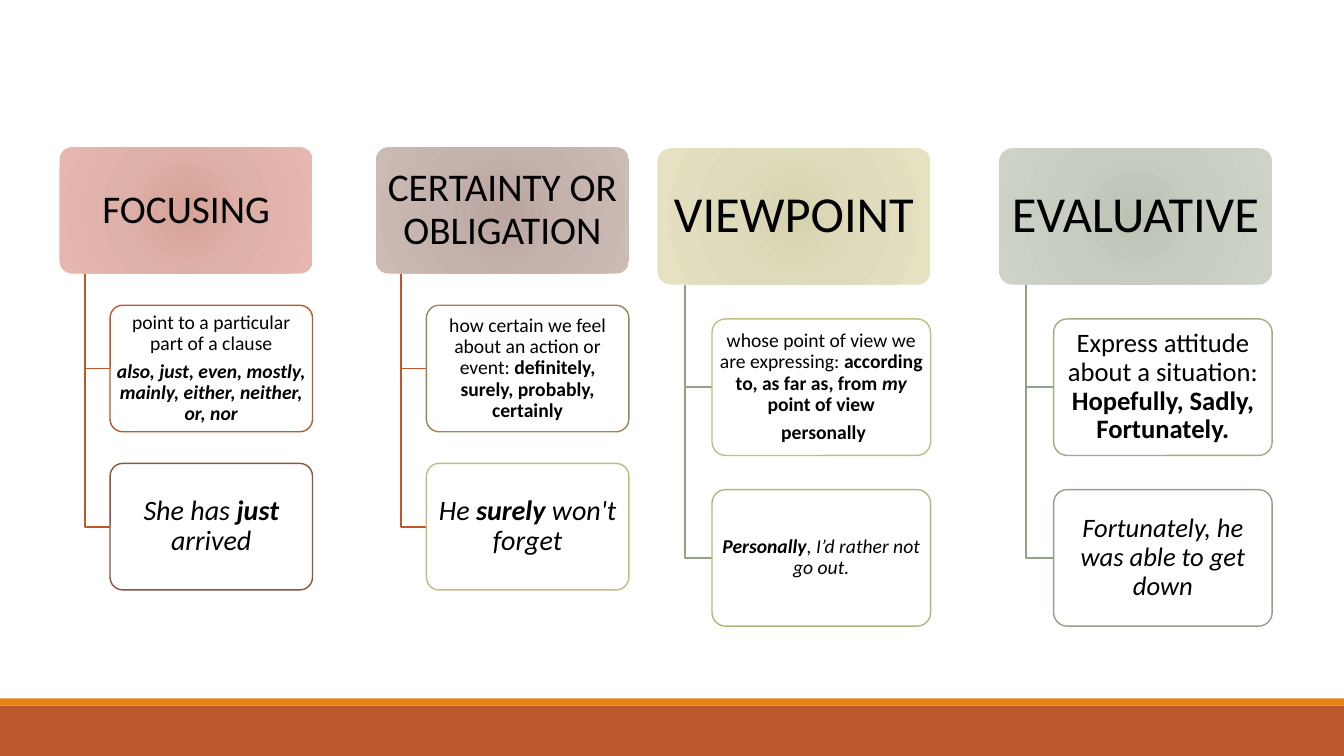
"""Builds a slide that sorts adverbs into four columns of boxes."""
from lxml.etree import SubElement
from pptx import Presentation
from pptx.dml.color import RGBColor
from pptx.enum.shapes import MSO_SHAPE as Preset
from pptx.enum.text import MSO_ANCHOR as Anchor, PP_ALIGN as Align
from pptx.oxml import parse_xml
from pptx.oxml.ns import nsdecls, qn
from pptx.util import Inches, Pt

WIDTH, HEIGHT = 13.33, 7.5
FONT = "Calibri"
COLORS = {
    "text": "000000", "paper": "FFFFFF", "rust": "BD582C", "orange": "E48312",
    "brown": "865640", "tan": "9B8357", "sand": "C2BC80", "olive": "B2B782",
    "moss": "A0AC85", "sage": "94A088",
}
GRADIENTS = {
    "rose": ("D7A197", "DEB1A8", "E6B7AE"),
    "taupe": ("B9A49E", "C4B2AD", "CCBAB5"),
    "straw": ("D7D3AF", "DFDBBD", "E5E1C1"),
    "mist": ("BBC3B5", "C7CDC1", "CDD4C7"),
}
GRADIENT_STOPS = (0, 45, 100)

# Each pair: left, top and header width, stem colour, columns.
# Each column: gradient, header, header size, boxes of (outline, size, paragraphs).
# Each run: text and its style letters, b for bold and i for italic.
PAIRS = [
    (0.59, 1.46, 2.51, "rust", [
        ("rose", "FOCUSING", 28, [
            ("rust", 14, [[("point to a particular part of a clause", "")],
                          [("also, just, even, mostly, mainly, either, neither, or, nor", "bi")]]),
            ("brown", 20, [[("She has ", "i"), ("just ", "bi"), ("arrived", "i")]]),
        ]),
        ("taupe", "CERTAINTY OR OBLIGATION", 28, [
            ("tan", 14, [[("how certain we feel about an action or event: ", ""),
                          ("definitely, surely, probably, certainly", "b")]]),
            ("sand", 20, [[("He ", "i"), ("surely", "bi"), (" won't forget", "i")]]),
        ]),
    ]),
    (6.52, 1.47, 2.71, "sage", [
        ("straw", "VIEWPOINT", 36, [
            ("sand", 14, [[("whose point of view we are expressing: ", ""),
                           ("according to, as far as, from ", "b"),
                           ("my", "bi"), (" point of view", "b")],
                          [(" personally", "b")]]),
            ("olive", 14, [[("Personally", "bi"), (", I’d rather not go out.", "i")]]),
        ]),
        ("mist", "EVALUATIVE", 36, [
            ("moss", 19, [[("Express attitude about a situation: ", ""),
                           ("Hopefully, Sadly, Fortunately.", "b")]]),
            ("sage", 19, [[("Fortunately, he was able to get down", "i")]]),
        ]),
    ]),
]


def color(name):
    """Return the named colour."""
    return RGBColor.from_string(COLORS[name])


def add_block(slide, preset, left, top, width, height, fill):
    """Add a solid preset shape without outline or shadow."""
    shape = slide.shapes.add_shape(preset, *map(Inches, (left, top, width, height)))
    shape.shadow.inherit = False
    shape.fill.solid()
    shape.fill.fore_color.rgb = color(fill)
    shape.line.fill.background()
    return shape


def add_rounded(slide, left, top, width, height, size, paragraphs):
    """Add a rounded box with centred text."""
    shape = add_block(slide, Preset.ROUNDED_RECTANGLE, left, top, width, height, "paper")
    shape.adjustments[0] = 0.1
    frame = shape.text_frame
    frame.word_wrap = True
    frame.vertical_anchor = Anchor.MIDDLE
    frame.margin_left = frame.margin_right = Inches(size * 0.002)
    frame.margin_top = frame.margin_bottom = Inches(size * 0.0014)
    for index, runs in enumerate(paragraphs):
        paragraph = frame.add_paragraph() if index else frame.paragraphs[0]
        paragraph.alignment = Align.CENTER
        paragraph.line_spacing = 0.9
        paragraph.space_after = Pt(size * 0.35)
        for text, style in runs:
            run = paragraph.add_run()
            run.text = text
            run.font.name = FONT
            run.font.size = Pt(size)
            run.font.bold = "b" in style
            run.font.italic = "i" in style
            run.font.color.rgb = color("text")
    return shape


def set_radial_fill(shape, shades):
    """Replace the solid fill by a circular gradient."""
    stops = "".join(
        f'<a:gs pos="{stop * 1000}"><a:srgbClr val="{shade}"/></a:gs>'
        for stop, shade in zip(GRADIENT_STOPS, shades))
    gradient = parse_xml(
        f'<a:gradFill {nsdecls("a")} rotWithShape="1"><a:gsLst>{stops}</a:gsLst>'
        '<a:path path="circle"><a:fillToRect l="100000" t="100000" r="100000" b="100000"/>'
        '</a:path></a:gradFill>')
    properties = shape.element.spPr
    properties.replace(properties.find(qn("a:solidFill")), gradient)


def set_outline(shape, name, weight):
    """Give a shape a coloured outline."""
    shape.line.color.rgb = color(name)
    shape.line.width = Pt(weight)


def add_stem(slide, left, top, right, bottom, name):
    """Add the bent line from a header down to a box."""
    builder = slide.shapes.build_freeform(Inches(left), Inches(top))
    corners = [(left, bottom), (right, bottom)]
    builder.add_line_segments([(Inches(x), Inches(y)) for x, y in corners], close=False)
    stem = builder.convert_to_shape()
    stem.shadow.inherit = False
    stem.fill.background()
    set_outline(stem, name, 1.25)


def add_column(slide, left, top, width, stem_color, column):
    """Add a header and the boxes that hang from it."""
    gradient, title, title_size, boxes = column
    height = width / 2
    header = add_rounded(slide, left, top, width, height, title_size, [[(title, "")]])
    set_radial_fill(header, GRADIENTS[gradient])
    box_left = left + width * 0.2
    for row, (outline, size, paragraphs) in enumerate(boxes, start=1):
        box_top = top + row * height * 1.25
        add_stem(slide, left + width * 0.1, top + height, box_left,
                 box_top + height / 2, stem_color)
        box = add_rounded(slide, box_left, box_top, width * 0.8, height, size, paragraphs)
        set_outline(box, outline, 1)
        fill_color = box.element.spPr.find(qn("a:solidFill"))[0]
        SubElement(fill_color, qn("a:alpha"), val="90000")


def main():
    """Build and save the slide."""
    presentation = Presentation()
    presentation.slide_width, presentation.slide_height = Inches(WIDTH), Inches(HEIGHT)
    slide = presentation.slides.add_slide(presentation.slide_layouts[6])
    footer = HEIGHT / 15
    strip = 0.07
    add_block(slide, Preset.RECTANGLE, 0, HEIGHT - footer, WIDTH, footer, "rust")
    add_block(slide, Preset.RECTANGLE, 0, HEIGHT - footer - strip, WIDTH, strip, "orange")
    for left, top, width, stem_color, columns in PAIRS:
        for index, column in enumerate(columns):
            add_column(slide, left + index * width * 1.25, top, width, stem_color, column)
    presentation.save("out.pptx")


if __name__ == "__main__":
    main()
